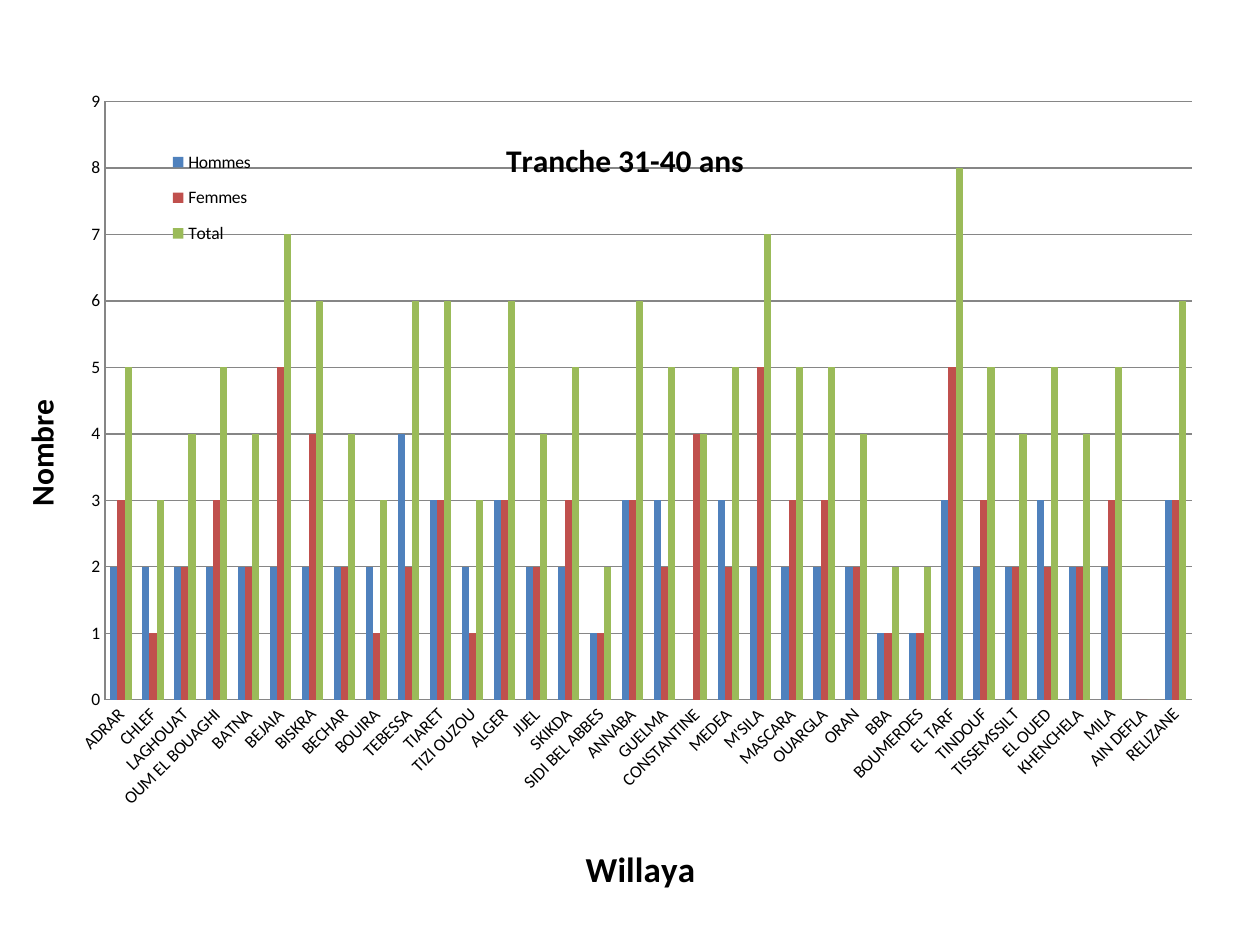
from lxml.etree import SubElement
from pptx import Presentation
from pptx.chart.data import CategoryChartData
from pptx.dml.color import RGBColor
from pptx.enum.chart import XL_CHART_TYPE, XL_LEGEND_POSITION, XL_TICK_MARK
from pptx.oxml.ns import qn
from pptx.util import Pt

WIDE, HIGH = Pt(720), Pt(540)


def paint(color, code):
    color.rgb = RGBColor.from_string(code)


def place(node, left, top, width=None, height=None):
    layout = node.find(qn("c:layout"))
    if layout is None:
        layout = SubElement(node, qn("c:layout"))
        node.insert(0 if node.tag == qn("c:plotArea") else 1, layout)
    for old in list(layout):
        layout.remove(old)
    spot = {"xMode": "edge", "yMode": "edge", "x": left / WIDE, "y": top / HIGH}
    if node.tag == qn("c:plotArea"):
        spot = {"layoutTarget": "inner", **spot}
    if width:
        spot.update(w=width / WIDE, h=height / HIGH)
    manual = SubElement(layout, qn("c:manualLayout"))
    for key, value in spot.items():
        SubElement(manual, qn("c:" + key)).set("val", str(value))


towns = [
    "ADRAR", "CHLEF", "LAGHOUAT", "OUM EL BOUAGHI", "BATNA", "BEJAIA", "BISKRA",
    "BECHAR", "BOUIRA", "TEBESSA", "TIARET", "TIZI OUZOU", "ALGER", "JIJEL",
    "SKIKDA", "SIDI BEL ABBES", "ANNABA", "GUELMA", "CONSTANTINE", "MEDEA",
    "M'SILA", "MASCARA", "OUARGLA", "ORAN", "BBA", "BOUMERDES", "EL TARF",
    "TINDOUF", "TISSEMSSILT", "EL OUED", "KHENCHELA", "MILA", "AIN DEFLA",
    "RELIZANE",
]
men = [2, 2, 2, 2, 2, 2, 2, 2, 2, 4, 3, 2, 3, 2, 2, 1, 3,
       3, 0, 3, 2, 2, 2, 2, 1, 1, 3, 2, 2, 3, 2, 2, 0, 3]
women = [3, 1, 2, 3, 2, 5, 4, 2, 1, 2, 3, 1, 3, 2, 3, 1, 3,
         2, 4, 2, 5, 3, 3, 2, 1, 1, 5, 3, 2, 2, 2, 3, 0, 3]
total = [m + w for m, w in zip(men, women)]

deck = Presentation()
deck.slide_width, deck.slide_height = WIDE, HIGH
slide = deck.slides.add_slide(deck.slide_layouts[6])

data = CategoryChartData()
data.categories = towns
for name, values in (("Hommes", men), ("Femmes", women), ("Total", total)):
    data.add_series(name, values)
chart = slide.shapes.add_chart(
    XL_CHART_TYPE.COLUMN_CLUSTERED, Pt(0), Pt(49), WIDE, HIGH, data
).chart
chart.font.name = "Calibri"
chart.font.size = Pt(10)
paint(chart.font.color, "000000")

plot = chart.plots[0]
plot.gap_width = 150
plot.overlap = 0
plot.vary_by_categories = False
for series, code in zip(plot.series, ("4F81BD", "C0504D", "9BBB59")):
    series.format.fill.solid()
    paint(series.format.fill.fore_color, code)

across, up = chart.category_axis, chart.value_axis
up.minimum_scale, up.maximum_scale, up.major_unit = 0, 9, 1
up.has_major_gridlines = True
for axis in (across, up):
    axis.major_tick_mark = axis.minor_tick_mark = XL_TICK_MARK.NONE
    axis.tick_labels.font.size = Pt(10)
for line in (across.format.line, up.format.line, up.major_gridlines.format.line):
    line.width = Pt(0.75)
    paint(line.color, "868686")
labels = chart.element.find(".//" + qn("c:catAx")).find(qn("c:txPr"))
labels.find(qn("a:bodyPr")).set("rot", "-2700000")

chart.has_title = True
titles = (
    (chart.chart_title, "Tranche 31-40 ans", 18, 286, 27),
    (across.axis_title, "Willaya", 20, 331, 430),
    (up.axis_title, "Nombre", 18, 8, 176),
)
for title, text, size, left, top in titles:
    title.text_frame.text = text
    font = title.text_frame.paragraphs[0].runs[0].font
    looks = {"name": "Calibri", "size": Pt(size), "bold": True}
    for key, value in looks.items():
        setattr(font, key, value)
    paint(font.color, "000000")
    place(title.element, Pt(left), Pt(top))
turn = up.axis_title.element.find(".//" + qn("a:bodyPr"))
turn.set("rot", "-5400000")
turn.set("vert", "horz")

chart.has_legend = True
legend = chart.legend
legend.position = XL_LEGEND_POSITION.RIGHT
legend.include_in_layout = False
legend.font.size = Pt(10)
spots = {"c:legend": (92, 29, 58, 70), "c:plotArea": (60, 9, 621, 342)}
for tag, spot in spots.items():
    place(chart.element.find(".//" + qn(tag)), *map(Pt, spot))

deck.save("out.pptx")
